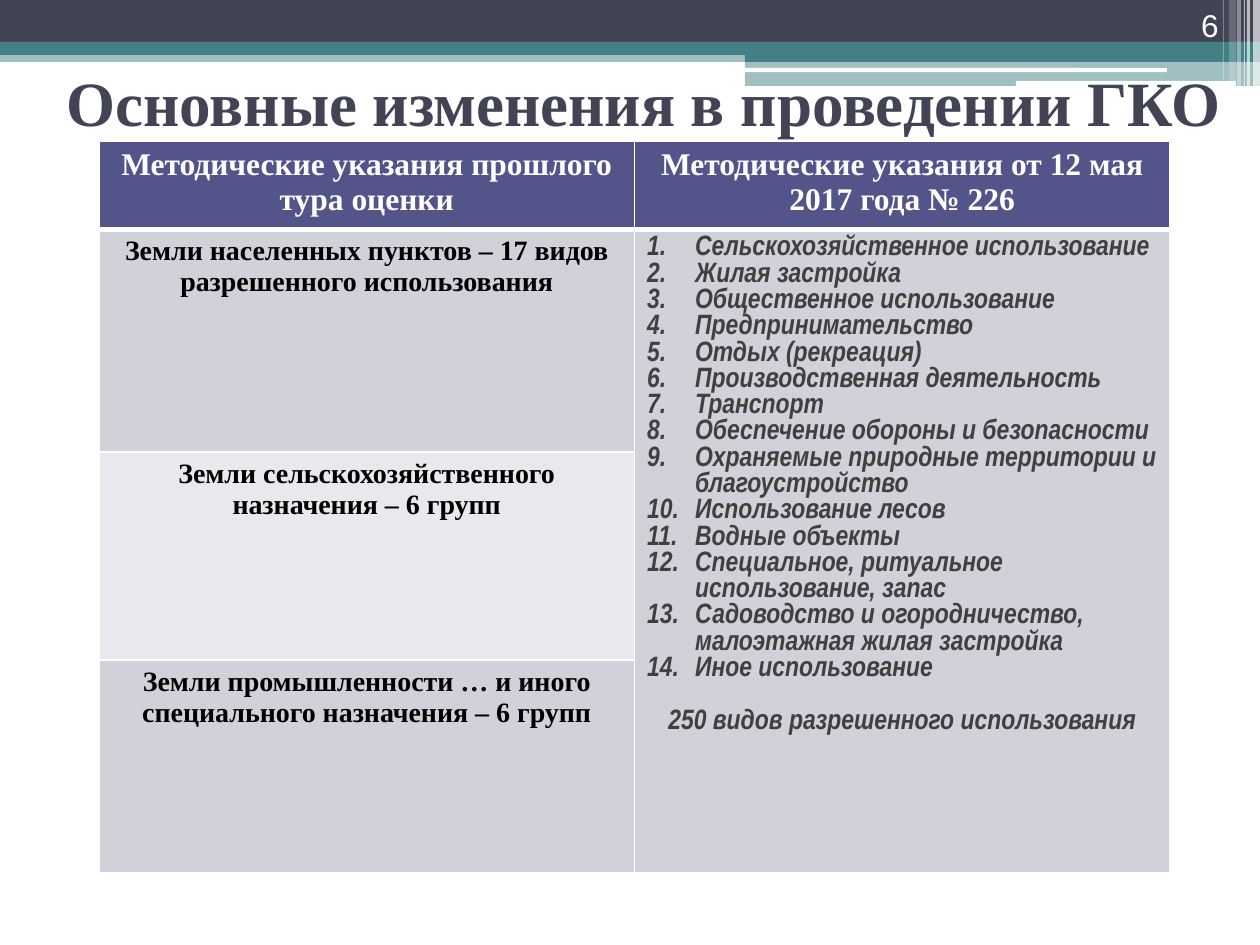
import pptx
import pptx.util
import pptx.dml.color
import pptx.enum.shapes
import pptx.enum.text
import pptx.oxml
import pptx.oxml.ns
import lxml.etree

EMU_PER_PX = 914400 / 126
COLORS = {
    "white": "FFFFFF", "black": "000000", "navy": "424456", "teal": "438086",
    "head": "53548A", "band": "D1D1DA", "light": "E9E9ED", "gray": "404040",
}
SERIF = "Times New Roman"
ALIGN = pptx.enum.text.PP_ALIGN
ANCHOR = pptx.enum.text.MSO_ANCHOR
RECT = pptx.enum.shapes.MSO_SHAPE.RECTANGLE
ROUND = pptx.enum.shapes.MSO_SHAPE.ROUNDED_RECTANGLE

# shape, left, top, width, height, color, opacity in percent
BANDS = [
    (RECT, 0, 50, 1260, 12, "teal", 50),
    (RECT, 0, 0, 1260, 43, "navy", 100),
    (RECT, 0, 42, 1260, 13, "teal", 100),
    (RECT, 745, 49, 515, 13, "teal", 100),
    (RECT, 745, 61, 515, 25, "teal", 50),
    (ROUND, 745, 68, 422, 4, "white", 100),
    (ROUND, 1016, 81, 220, 5, "white", 100),
    (RECT, 1253, 0, 7, 86, "white", 65),
    (RECT, 1247, 0, 3, 86, "white", 65),
    (RECT, 1244, 0, 1, 86, "white", 60),
    (RECT, 1237, 0, 4, 86, "white", 40),
    (RECT, 1229, 0, 7, 81, "white", 20),
    (RECT, 1223, 0, 1, 81, "white", 30),
]
HEADERS = ["Методические указания прошлого тура оценки",
           "Методические указания от 12 мая 2017 года № 226"]
LAND_GROUPS = [
    ("Земли населенных пунктов – 17 видов разрешенного использования", "band"),
    ("Земли сельскохозяйственного назначения – 6 групп", "light"),
    ("Земли промышленности … и иного специального назначения – 6 групп", "band"),
]
USES = [
    "Сельскохозяйственное использование", "Жилая застройка",
    "Общественное использование", "Предпринимательство",
    "Отдых (рекреация)", "Производственная деятельность", "Транспорт",
    "Обеспечение обороны и безопасности",
    "Охраняемые природные территории и благоустройство",
    "Использование лесов", "Водные объекты",
    "Специальное, ритуальное использование, запас",
    "Садоводство и огородничество, малоэтажная жилая застройка",
    "Иное использование",
]
USES_TOTAL = "250 видов разрешенного использования"
ROW_HEIGHTS = [82, 223, 208, 80]


def px(n):
    return pptx.util.Emu(round(n * EMU_PER_PX))


def rgb(name):
    return pptx.dml.color.RGBColor.from_string(COLORS[name])


def add_run(p, text, size, color, font=SERIF, bold=True, italic=False):
    r = p.add_run()
    r.text = text
    r.font.size = pptx.util.Pt(size)
    r.font.name = font
    r.font.bold = bold
    r.font.italic = italic
    r.font.color.rgb = rgb(color)


def add_band(slide, kind, left, top, width, height, color, opacity):
    sp = slide.shapes.add_shape(kind, px(left), px(top), px(width), px(height))
    sp.shadow.inherit = False
    sp.line.fill.background()
    sp.fill.solid()
    sp.fill.fore_color.rgb = rgb(color)
    if opacity < 100:
        clr = sp.fill._xPr.find(".//" + pptx.oxml.ns.qn("a:srgbClr"))
        alpha = lxml.etree.SubElement(clr, pptx.oxml.ns.qn("a:alpha"))
        alpha.set("val", str(opacity * 1000))


def add_title(slide, text):
    title = slide.shapes.title
    title.left, title.top, title.width, title.height = px(54), px(28), px(1183), px(147)
    tf = title.text_frame
    tf.word_wrap = True
    tf.vertical_anchor = ANCHOR.MIDDLE
    p = tf.paragraphs[0]
    p.alignment = ALIGN.LEFT
    add_run(p, text, 36, "navy")
    # Bring the title in front of the bands.
    title._element.getparent().append(title._element)


def add_page_number(slide, number):
    box = slide.shapes.add_textbox(px(1126), px(0), px(105), px(50))
    tf = box.text_frame
    tf.word_wrap = True
    tf.vertical_anchor = ANCHOR.BOTTOM
    p = tf.paragraphs[0]
    p.alignment = ALIGN.RIGHT
    add_run(p, number, 18, "white", "Arial", bold=False)


def format_cell(cell, fill, top=1, bottom=1):
    """Fill the cell and give it white borders, widths in points."""
    cell.fill.solid()
    cell.fill.fore_color.rgb = rgb(fill)
    tcPr = cell._tc.get_or_add_tcPr()
    for i, (side, width) in enumerate(zip("LRTB", (1, 1, top, bottom))):
        tcPr.insert(i, pptx.oxml.parse_xml(
            f'<a:ln{side} {pptx.oxml.ns.nsdecls("a")} w="{pptx.util.Pt(width)}">'
            f'<a:solidFill><a:srgbClr val="{COLORS["white"]}"/></a:solidFill>'
            f'</a:ln{side}>'))


def number_paragraph(p, indent):
    pPr = p._p.get_or_add_pPr()
    pPr.set("marL", str(px(indent)))
    pPr.set("indent", str(-px(indent)))
    bullet = lxml.etree.SubElement(pPr, pptx.oxml.ns.qn("a:buAutoNum"))
    bullet.set("type", "arabicPeriod")


def write_centered(cell, text, size, color):
    p = cell.text_frame.paragraphs[0]
    p.alignment = ALIGN.CENTER
    add_run(p, text, size, color)


def write_uses(cell):
    tf = cell.text_frame
    for i, use in enumerate(USES):
        p = tf.add_paragraph() if i else tf.paragraphs[0]
        number_paragraph(p, 48)
        add_run(p, use, 16, "gray", "Arial Narrow", italic=True)
    p = tf.add_paragraph()
    p.alignment = ALIGN.CENTER
    p.space_before = pptx.util.Pt(15)
    add_run(p, USES_TOTAL, 16, "gray", "Arial Narrow", italic=True)


def add_comparison(slide):
    frame = slide.shapes.add_table(len(ROW_HEIGHTS), 2, px(99), px(141),
                                   px(1071), px(sum(ROW_HEIGHTS)))
    table = frame.table
    for row, height in zip(table.rows, ROW_HEIGHTS):
        row.height = px(height)
    for col, text in enumerate(HEADERS):
        write_centered(table.cell(0, col), text, 18, "white")
        format_cell(table.cell(0, col), "head", bottom=3)
    for row, (text, fill) in enumerate(LAND_GROUPS, 1):
        write_centered(table.cell(row, 0), text, 16, "black")
        for col, color in enumerate((fill, "band")):
            format_cell(table.cell(row, col), color, top=3 if row == 1 else 1)
    table.cell(1, 1).merge(table.cell(3, 1))
    write_uses(table.cell(1, 1))


def main():
    prs = pptx.Presentation()
    prs.slide_width, prs.slide_height = px(1260), px(945)
    slide = prs.slides.add_slide(prs.slide_layouts[5])
    for band in BANDS:
        add_band(slide, *band)
    add_title(slide, "Основные изменения в проведении ГКО")
    add_page_number(slide, "6")
    add_comparison(slide)
    prs.save("out.pptx")


if __name__ == "__main__":
    main()
